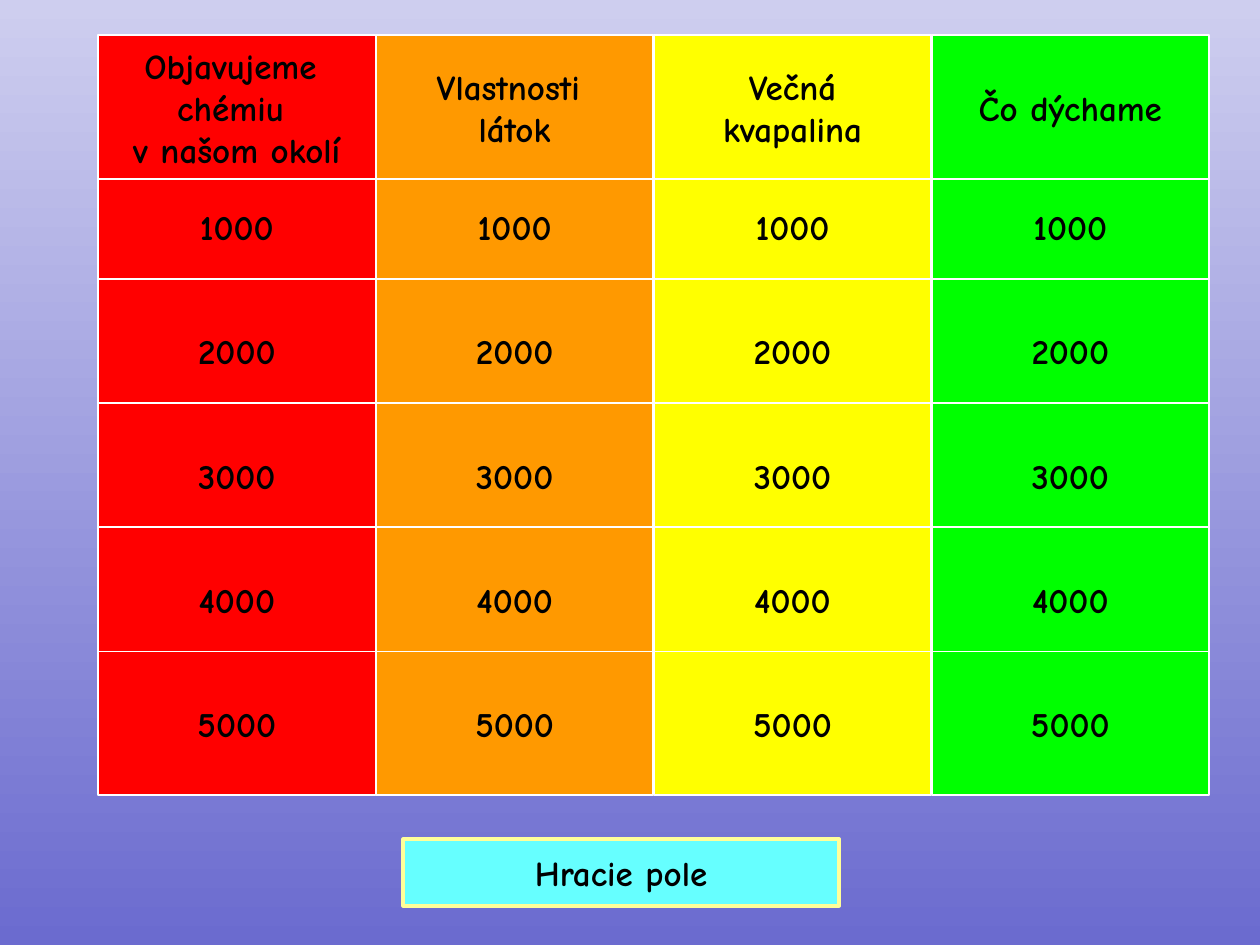
from pptx import Presentation
from pptx.dml.color import RGBColor
from pptx.enum.shapes import MSO_SHAPE
from pptx.enum.text import MSO_ANCHOR, PP_ALIGN
from pptx.util import Inches, Pt

RED = RGBColor(0xFF, 0x00, 0x00)
ORANGE = RGBColor(0xFF, 0x99, 0x00)
YELLOW = RGBColor(0xFF, 0xFF, 0x00)
GREEN = RGBColor(0x00, 0xFF, 0x00)
CYAN = RGBColor(0x66, 0xFF, 0xFF)
CREAM = RGBColor(0xFF, 0xFF, 0x99)
WHITE = RGBColor(0xFF, 0xFF, 0xFF)
BLACK = RGBColor(0x00, 0x00, 0x00)
SKY_TOP = RGBColor(0xCE, 0xCE, 0xEF)
SKY_BOTTOM = RGBColor(0x6B, 0x6B, 0xCF)
FONT = "Comic Neue"

TOPICS = [
    ("Objavujeme \nchémiu \nv našom okolí", RED),
    ("Vlastnosti \nlátok", ORANGE),
    ("Večná\nkvapalina", YELLOW),
    ("Čo dýchame", GREEN),
]
POINTS = ["1000", "2000", "3000", "4000", "5000"]
BOARD_BUTTON = "Hracie pole"

BOARD_LEFT, HEADER_TOP, POINTS_TOP = 0.78, 0.28, 1.23
TILE_WIDTH, TILE_HEIGHT = 2.2, 1.14
COLUMN_STEP, ROW_STEP = 2.205, 0.985


def add_button(slide, text, position, size, fill, line=WHITE, line_width=1):
    button = slide.shapes.add_shape(
        MSO_SHAPE.ACTION_BUTTON_CUSTOM, *map(Inches, position + size))
    button.shadow.inherit = False
    button.fill.solid()
    button.fill.fore_color.rgb = fill
    button.line.color.rgb = line
    button.line.width = Pt(line_width)
    frame = button.text_frame
    frame.word_wrap = False
    frame.vertical_anchor = MSO_ANCHOR.MIDDLE
    frame.text = text
    for para in frame.paragraphs:
        para.alignment = PP_ALIGN.CENTER
        for span in para.runs:
            span.font.name = FONT
            span.font.size = Pt(20)
            span.font.bold = True
            span.font.color.rgb = BLACK


def paint_background(slide):
    fill = slide.background.fill
    fill.gradient()
    fill.gradient_angle = 270
    for stop, color, place in zip(fill.gradient_stops, (SKY_TOP, SKY_BOTTOM), (0, 1)):
        stop.color.rgb = color
        stop.position = place


def add_row(slide, texts, top):
    for column, (text, (_, color)) in enumerate(zip(texts, TOPICS)):
        left = BOARD_LEFT + column * COLUMN_STEP
        add_button(slide, text, (left, top), (TILE_WIDTH, TILE_HEIGHT), color)


def main():
    deck = Presentation()
    deck.slide_width, deck.slide_height = Inches(10), Inches(7.5)
    slide = deck.slides.add_slide(deck.slide_layouts[6])
    paint_background(slide)
    for row, points in enumerate(POINTS):
        add_row(slide, [points] * len(TOPICS), POINTS_TOP + row * ROW_STEP)
    add_row(slide, [title for title, _ in TOPICS], HEADER_TOP)
    add_button(slide, BOARD_BUTTON, (3.2, 6.66), (3.46, 0.53), CYAN, CREAM, 2)
    deck.save("out.pptx")


if __name__ == "__main__":
    main()
